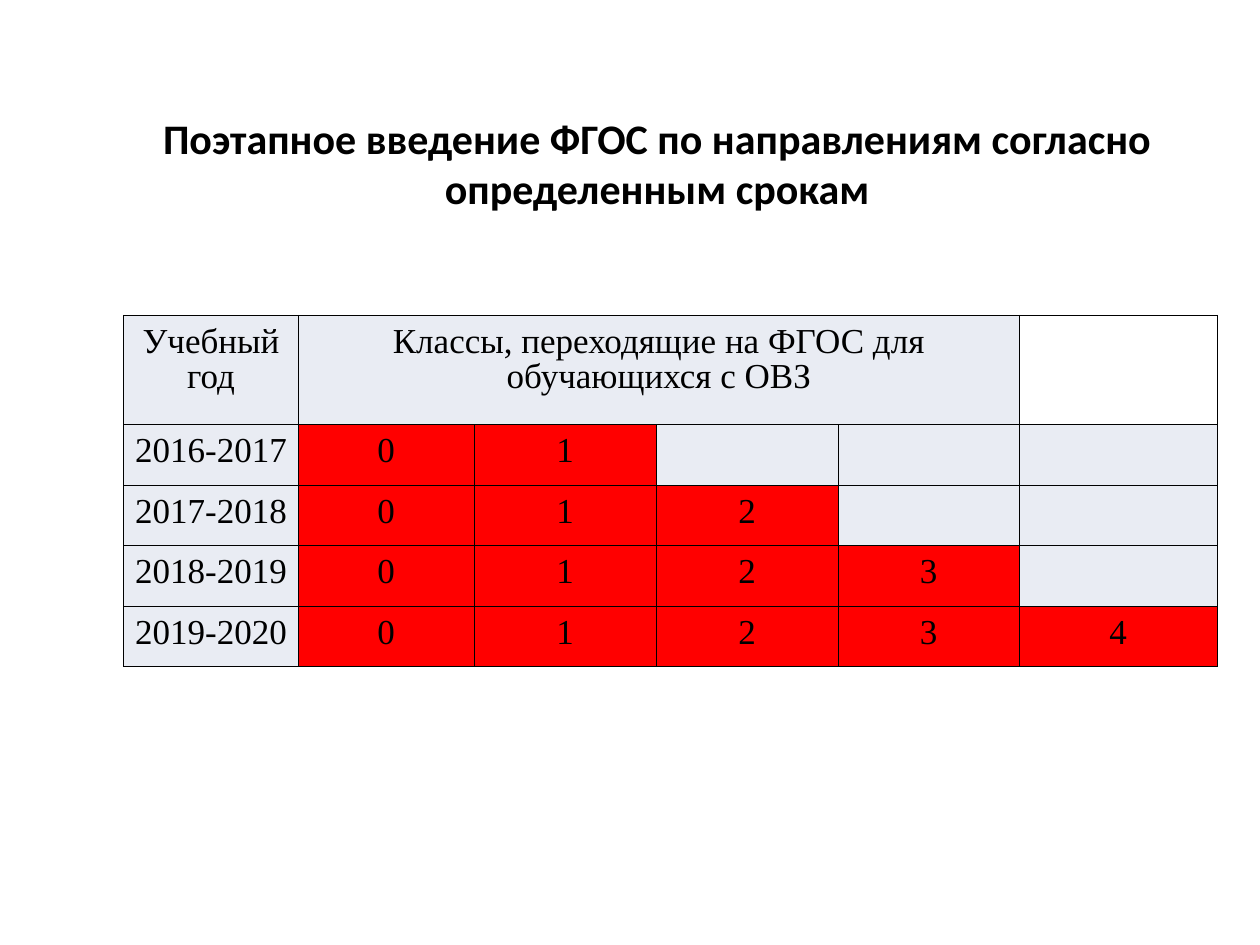
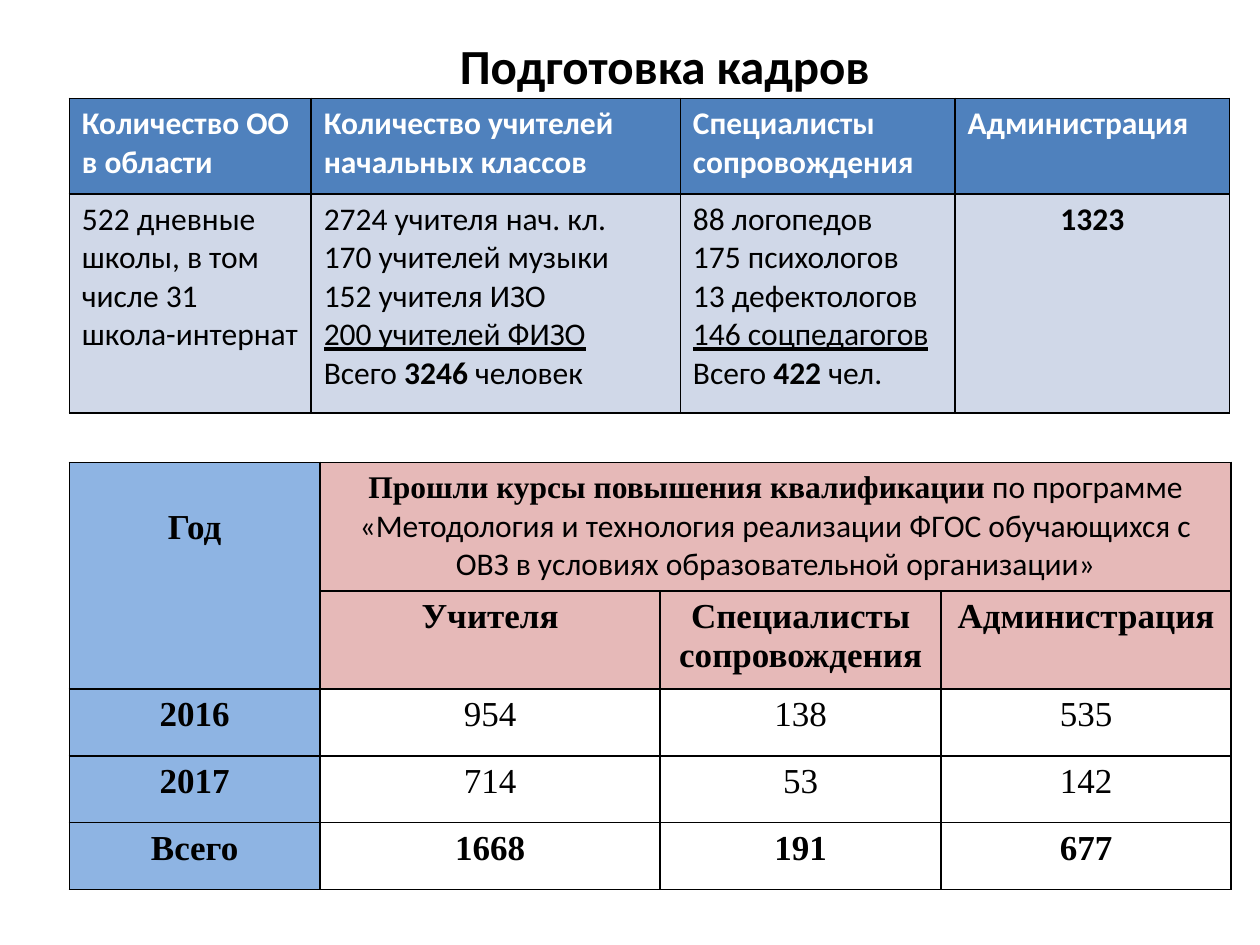
from lxml.etree import SubElement
from pptx import Presentation
from pptx.dml.color import RGBColor
from pptx.enum.text import PP_ALIGN as Align
from pptx.oxml.ns import qn
from pptx.util import Inches, Pt

COLORS = {
    "black": "000000",
    "white": "FFFFFF",
    "pale": "E9ECF3",
    "red": "FF0000",
    "header": "4F81BD",
    "body": "D0D8E8",
    "year": "8EB4E3",
    "courses": "E6B9B8",
}
SANS = "Calibri"
SERIF = "Times New Roman"


def color(name):
    return RGBColor.from_string(COLORS[name])


def style_font(font, name, size, bold=False, ink="black"):
    font.name = name
    font.size = Pt(size)
    font.bold = bold
    font.color.rgb = color(ink)


def add_title(slide, box, text, size):
    shape = slide.shapes.add_textbox(*map(Inches, box))
    shape.text_frame.word_wrap = True
    paragraph = shape.text_frame.paragraphs[0]
    paragraph.text = text
    paragraph.alignment = Align.CENTER
    style_font(paragraph.font, SANS, size, bold=True)


def add_grid(slide, left, top, widths, heights):
    table = slide.shapes.add_table(
        len(heights), len(widths), Inches(left), Inches(top),
        Inches(sum(widths)), Inches(sum(heights))).table
    table.first_row = table.horz_banding = False
    for column, width in zip(table.columns, widths):
        column.width = Inches(width)
    for row, height in zip(table.rows, heights):
        row.height = Inches(height)
    return table


def draw_borders(table, points):
    for cell in table.iter_cells():
        properties = cell._tc.get_or_add_tcPr()
        for index, side in enumerate(("lnL", "lnR", "lnT", "lnB")):
            line = properties.makeelement(qn(f"a:{side}"), {"w": str(Pt(points))})
            solid = SubElement(line, qn("a:solidFill"))
            SubElement(solid, qn("a:srgbClr"), val=COLORS["black"])
            properties.insert(index, line)


def paint(cell, fill):
    if fill:
        cell.fill.solid()
        cell.fill.fore_color.rgb = color(fill)
    else:
        cell.fill.background()


def write(cell, text, font, size, bold=False, ink="black", align=Align.CENTER):
    cell.text = text
    for paragraph in cell.text_frame.paragraphs:
        paragraph.alignment = align
        style_font(paragraph.font, font, size, bold, ink)


def add_schedule(slide, left, top):
    widths = [1.39, 1.39, 1.45, 1.44, 1.44, 1.57]
    years = ["2016-2017", "2017-2018", "2018-2019", "2019-2020"]
    table = add_grid(slide, left, top, widths, [0.87] + [0.48] * len(years))
    table.cell(0, 1).merge(table.cell(0, 4))

    rows = [["Учебный год", "Классы, переходящие на ФГОС для обучающихся с ОВЗ"]]
    for count, year in enumerate(years, start=2):
        rows.append([year] + [str(grade) for grade in range(count)])

    for row_index, texts in enumerate(rows):
        for column_index in range(len(widths)):
            cell = table.cell(row_index, column_index)
            filled = column_index < len(texts)
            if row_index == 0 and column_index == len(widths) - 1:
                paint(cell, None)
            elif row_index and column_index and filled:
                paint(cell, "red")
            else:
                paint(cell, "pale")
            if filled:
                cell.margin_left = cell.margin_right = Inches(0.07)
                cell.margin_top = Inches(0.08)
                write(cell, texts[column_index], SERIF, 20)
                cell.text_frame.paragraphs[0].line_spacing = 0.9
    draw_borders(table, 0.23)


def write_staff_list(cell, lines, total, unit):
    write(cell, "\n".join(lines + ["Всего "]), SANS, 18, align=Align.LEFT)
    paragraphs = cell.text_frame.paragraphs
    paragraphs[-2].font.underline = True
    paragraphs[-2].runs[0].font.underline = True
    number = paragraphs[-1].add_run()
    number.text = total
    number.font.bold = True
    paragraphs[-1].add_run().text = f" {unit}"


def add_staff(slide, left, top):
    table = add_grid(slide, left, top, [1.92, 2.93, 2.18, 2.18], [0.76, 1.74])
    headers = ["Количество ОО в области", "Количество учителей начальных классов",
               "Специалисты сопровождения", "Администрация"]
    for index, header in enumerate(headers):
        write(table.cell(0, index), header, SANS, 18, True, "white", Align.LEFT)
        paint(table.cell(0, index), "header")
        paint(table.cell(1, index), "body")

    schools, teachers, specialists, administration = table.rows[1].cells
    write(schools, "522 дневные школы, в том числе 31 школа-интернат",
          SANS, 18, align=Align.LEFT)
    write_staff_list(teachers, ["2724 учителя нач. кл.", "170 учителей музыки",
                                "152 учителя ИЗО", "200 учителей ФИЗО"],
                     "3246", "человек")
    write_staff_list(specialists, ["88 логопедов", "175 психологов",
                                   "13 дефектологов", "146 соцпедагогов"],
                     "422", "чел.")
    write(administration, "1323", SANS, 18, bold=True)
    draw_borders(table, 1)


def add_courses(slide, left, top):
    table = add_grid(slide, left, top, [1.99, 2.7, 2.23, 2.3],
                     [1.02, 0.78] + [0.53] * 3)
    table.cell(0, 0).merge(table.cell(1, 0))
    table.cell(0, 1).merge(table.cell(0, 3))

    year = table.cell(0, 0)
    write(year, "Год", SERIF, 20, bold=True)
    year.margin_top = Inches(0.36)

    heading = table.cell(0, 1)
    write(heading, "Прошли курсы повышения квалификации", SANS, 18)
    paragraph = heading.text_frame.paragraphs[0]
    style_font(paragraph.runs[0].font, SERIF, 18, bold=True)
    paragraph.add_run().text = (
        " по программе «Методология и технология реализации ФГОС "
        "обучающихся с ОВЗ в условиях образовательной организации»")

    rows = [
        ["", "Учителя", "Специалисты сопровождения", "Администрация"],
        ["2016", "954", "138", "535"],
        ["2017", "714", "53", "142"],
        ["Всего", "1668", "191", "677"],
    ]
    for row_index, texts in enumerate(rows, start=1):
        for column_index, text in enumerate(texts):
            bold = column_index == 0 or row_index in (1, len(rows))
            if text:
                write(table.cell(row_index, column_index), text, SERIF, 20, bold)
    for row_index, row in enumerate(table.rows):
        for column_index, cell in enumerate(row.cells):
            if column_index == 0:
                paint(cell, "year")
            else:
                paint(cell, "courses" if row_index < 2 else None)
    draw_borders(table, 1)


def build_schedule_slide(slide):
    add_schedule(slide, 0.98, 2.5)
    add_title(slide, (0.94, 0.84, 8.55, 0.76),
              "Поэтапное введение ФГОС по направлениям согласно определенным срокам", 24)


def build_training_slide(slide):
    add_title(slide, (1.39, 0.23, 7.77, 0.57), "Подготовка кадров", 28)
    add_courses(slide, 0.55, 3.67)
    add_staff(slide, 0.55, 0.78)


def main():
    presentation = Presentation()
    presentation.slide_width = Inches(10)
    presentation.slide_height = Inches(7.5)
    blank = presentation.slide_layouts[6]
    for build in (build_schedule_slide, build_training_slide):
        build(presentation.slides.add_slide(blank))
    presentation.save("out.pptx")


if __name__ == "__main__":
    main()
